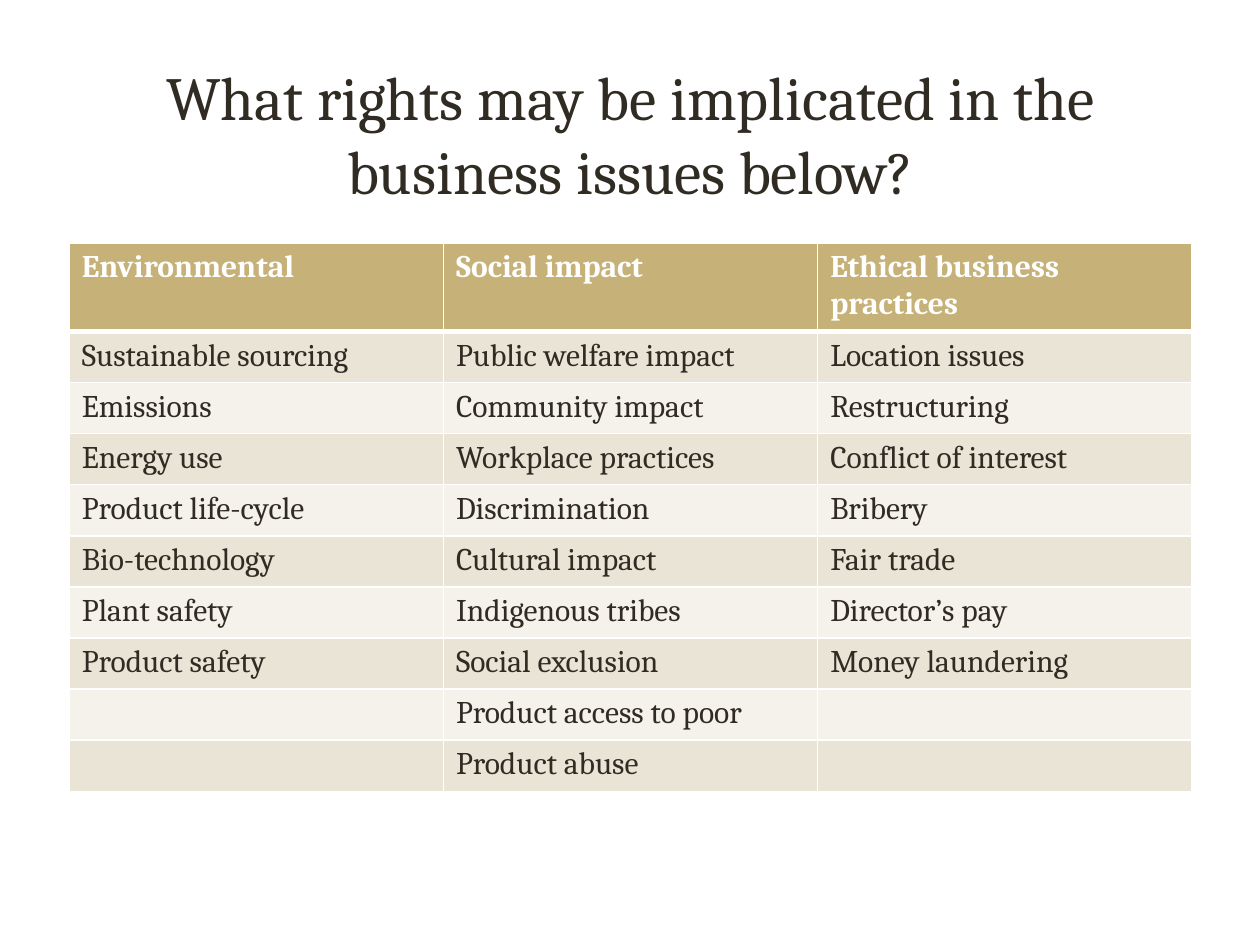
from dataclasses import dataclass

from lxml import etree
from pptx import Presentation
from pptx.dml.color import RGBColor
from pptx.enum.text import MSO_ANCHOR, PP_ALIGN
from pptx.oxml.ns import qn
from pptx.util import Inches, Pt

CENTER = PP_ALIGN.CENTER
BOTTOM = MSO_ANCHOR.BOTTOM


@dataclass(frozen=True)
class Theme:
    font: str = "Cambria"
    title_size: int = 35
    table_size: int = 18
    ink: str = "302C24"
    white: str = "FFFFFF"
    header: str = "C6B178"
    bands: tuple = ("EAE4D6", "F5F2EC")
    thin: int = 1
    thick: int = 3


class SlideBuilder:
    def __init__(self, slide, theme):
        self.s = slide
        self.theme = theme

    def run(self, p, text, size, color, bold=False):
        r = p.add_run()
        r.text = text
        r.font.name = self.theme.font
        r.font.size = Pt(size)
        r.font.bold = bold
        r.font.color.rgb = RGBColor.from_string(color)

    def title(self, text, left, top, width, height):
        sp = self.s.shapes.add_textbox(left, top, width, height)
        tf = sp.text_frame
        tf.word_wrap = True
        tf.vertical_anchor = BOTTOM
        p = tf.paragraphs[0]
        p.alignment = CENTER
        self.run(p, text, self.theme.title_size, self.theme.ink)

    def border(self, cell, side, width):
        ln = etree.SubElement(cell._tc.get_or_add_tcPr(), qn(f"a:ln{side}"), w=str(Pt(width)))
        fill = etree.SubElement(ln, qn("a:solidFill"))
        etree.SubElement(fill, qn("a:srgbClr"), val=self.theme.white)

    def cell(self, cell, text, row):
        t = self.theme
        is_header = row == 0
        # Borders come before the fill; the rule under the header is thick
        widths = {"L": t.thin, "R": t.thin,
                  "T": t.thick if row == 1 else t.thin,
                  "B": t.thick if is_header else t.thin}
        for side, width in widths.items():
            self.border(cell, side, width)
        cell.fill.solid()
        fill = t.header if is_header else t.bands[(row - 1) % 2]
        cell.fill.fore_color.rgb = RGBColor.from_string(fill)
        if text:
            color = t.white if is_header else t.ink
            self.run(cell.text_frame.paragraphs[0], text, t.table_size, color, is_header)

    def table(self, rows, left, top, width, header_height, body_height):
        height = header_height + body_height
        table = self.s.shapes.add_table(len(rows), len(rows[0]), left, top, width, height).table
        for col in table.columns:
            col.width = width // len(rows[0])
        for i, row in enumerate(rows):
            table.rows[i].height = body_height // (len(rows) - 1) if i else header_height
            for j, text in enumerate(row):
                self.cell(table.cell(i, j), text, i)


ISSUES = [
    ("Environmental", "Social impact", "Ethical business practices"),
    ("Sustainable sourcing", "Public welfare impact", "Location issues"),
    ("Emissions", "Community impact", "Restructuring"),
    ("Energy use", "Workplace practices", "Conflict of interest"),
    ("Product life-cycle", "Discrimination", "Bribery"),
    ("Bio-technology", "Cultural impact", "Fair trade"),
    ("Plant safety", "Indigenous tribes", "Director’s pay"),
    ("Product safety", "Social exclusion", "Money laundering"),
    ("", "Product access to poor", ""),
    ("", "Product abuse", ""),
]


def main():
    prs = Presentation()
    prs.slide_width, prs.slide_height = Inches(10), Inches(7.5)
    builder = SlideBuilder(prs.slides.add_slide(prs.slide_layouts[6]), Theme())
    left, width = Inches(0.55), Inches(8.91)

    # Title
    builder.title("What rights may be implicated in the business issues below?",
                  left, Inches(0.1), width, Inches(1.59))

    # Business issues by theme
    builder.table(ISSUES, left, Inches(1.93), width, Inches(0.67), Inches(3.65))

    prs.save("out.pptx")


if __name__ == "__main__":
    main()
